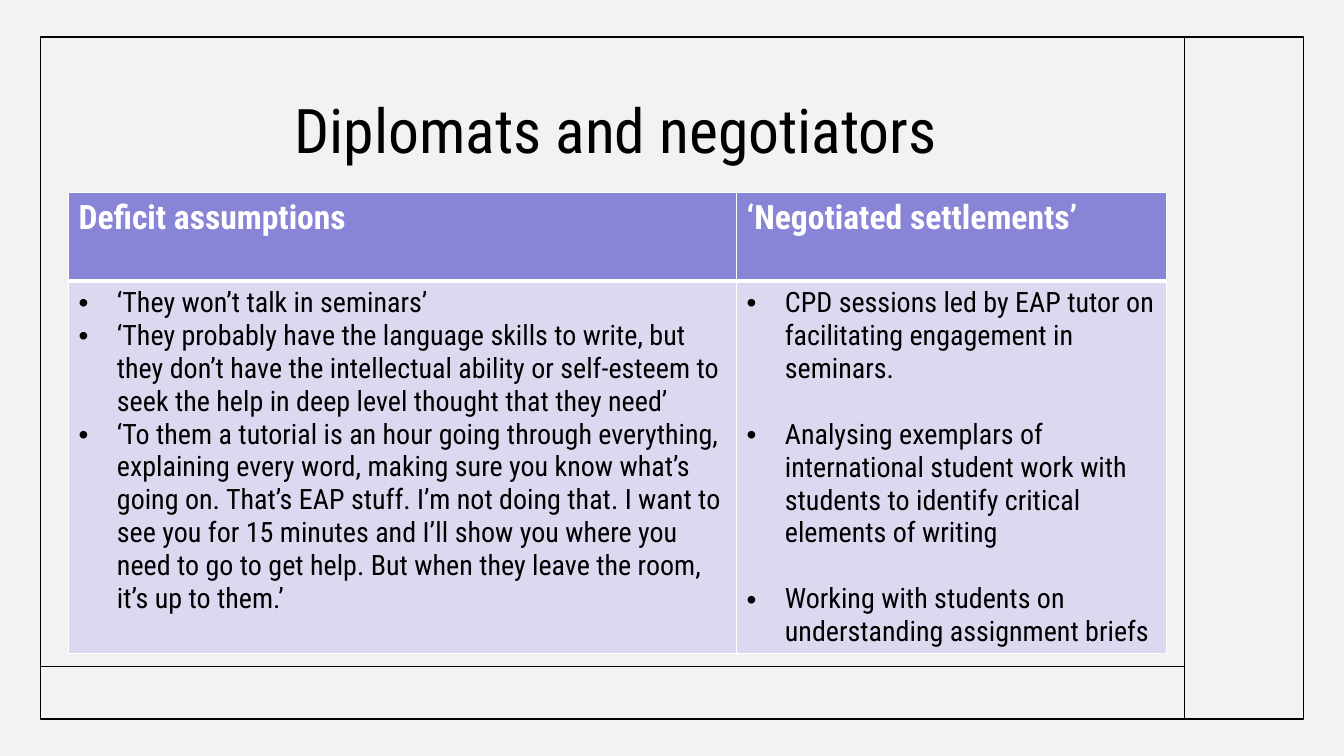
from lxml import etree
from pptx import Presentation, util as u
from pptx.dml.color import RGBColor
from pptx.enum import shapes, text
from pptx.oxml.ns import qn

INK, PAPER, WHITE = "000000", "F2F2F2", "FFFFFF"
HEAD, BODY = "8885D7", "DAD9F0"
SIDE, EDGE = 3, 4.9          # frame margins, % of width and height
RAIL, FOOT = 88.15, 88.13    # inner rules, % of width and height

POINTS = [
    ["‘They won’t talk in seminars’",
     "‘They probably have the language skills to write, but they don’t have "
     "the intellectual ability or self-esteem to seek the help in deep level "
     "thought that they need’",
     "‘To them a tutorial is an hour going through everything, explaining "
     "every word, making sure you know what’s going on. That’s EAP stuff. "
     "I’m not doing that. I want to see you for 15 minutes and I’ll show you "
     "where you need to go to get help. But when they leave the room, it’s "
     "up to them.’"],
    ["CPD sessions led by EAP tutor on facilitating engagement in seminars.",
     "Analysing exemplars of international student work with students to "
     "identify critical elements of writing",
     "Working with students on understanding assignment briefs"],
]


def color(code):
    return RGBColor.from_string(code)


class Deck:
    """Style and current slide; all lengths are percentages of its size."""
    font = "Roboto Condensed"

    def __init__(self):
        self.prs = Presentation()
        self.prs.slide_width = u.Inches(13.33)
        self.prs.slide_height = u.Inches(7.5)
        self.slide = self.prs.slides.add_slide(self.prs.slide_layouts[5])
        fill = self.slide.background.fill
        fill.solid()
        fill.fore_color.rgb = color(PAPER)

    def x(self, share):
        return round(self.prs.slide_width * share / 100)

    def y(self, share):
        return round(self.prs.slide_height * share / 100)

    def box(self, left, top, width, height):
        return self.x(left), self.y(top), self.x(width), self.y(height)

    def put(self, frame, *lines, size=20, ink=INK, bold=False, align=None,
            lead=None, gap=0, bullet=False):
        """Fill a text frame with one paragraph per line; gap is in points."""
        frame.word_wrap = True
        for i, line in enumerate(lines):
            para = frame.add_paragraph() if i else frame.paragraphs[0]
            para.alignment, para.line_spacing = align, lead
            if i and gap:
                para.space_before = u.Pt(gap)
            if bullet:
                props = para._p.get_or_add_pPr()
                props.set("marL", str(u.Inches(0.38)))
                props.set("indent", str(-u.Inches(0.38)))
                etree.SubElement(props, qn("a:buFont")).set("typeface", "Arial")
                etree.SubElement(props, qn("a:buChar")).set("char", "•")
            run = para.add_run()
            run.text = line
            run.font.name, run.font.size = self.font, u.Pt(size)
            run.font.bold, run.font.color.rgb = bold, color(ink)

    def title(self, words, *place):
        head = self.slide.shapes.title
        head.left, head.top, head.width, head.height = self.box(*place)
        head.text_frame.auto_size = text.MSO_AUTO_SIZE.NONE
        head.text_frame.vertical_anchor = text.MSO_ANCHOR.MIDDLE
        self.put(head.text_frame, words, size=44, lead=0.9,
                 align=text.PP_ALIGN.CENTER)

    def frame(self, *place):
        rect = self.slide.shapes.add_shape(shapes.MSO_SHAPE.RECTANGLE,
                                           *self.box(*place))
        rect.shadow.inherit = False
        rect.fill.background()
        self.stroke(rect)

    def rule(self, x1, y1, x2, y2):
        line = self.slide.shapes.add_connector(
            shapes.MSO_CONNECTOR.STRAIGHT,
            self.x(x1), self.y(y1), self.x(x2), self.y(y2))
        self.stroke(line)
        etree.SubElement(line._element.spPr, qn("a:effectLst"))

    def stroke(self, shape):
        shape.line.color.rgb = color(INK)
        shape.line.width = u.Pt(1)

    def table(self, left, top, cols, rows):
        grid = self.slide.shapes.add_table(
            len(rows), len(cols),
            *self.box(left, top, sum(cols), sum(rows))).table
        for col, share in zip(grid.columns, cols):
            col.width = self.x(share)
        for row, share in zip(grid.rows, rows):
            row.height = self.y(share)
        return grid

    def cell(self, cell, fill, *lines, top=1, base=1, **style):
        """Fill a cell; top and base are border widths in points."""
        props = cell._tc.get_or_add_tcPr()
        for side, width in zip("LRTB", (1, 1, top, base)):
            edge = etree.SubElement(props, qn("a:ln" + side), w=str(u.Pt(width)))
            solid = etree.SubElement(edge, qn("a:solidFill"))
            etree.SubElement(solid, qn("a:srgbClr"), val=WHITE)
        cell.fill.solid()
        cell.fill.fore_color.rgb = color(fill)
        self.put(cell.text_frame, *lines, **style)


def main():
    deck = Deck()
    deck.frame(SIDE, EDGE, 100 - 2 * SIDE, 100 - 2 * EDGE)
    deck.rule(RAIL, EDGE, RAIL, 100 - EDGE)
    deck.rule(SIDE, FOOT, RAIL, FOOT)
    deck.title("Diplomats and negotiators", 6.9, 8, 77.9, 19.3)

    grid = deck.table(5.1, 25.5, cols=(49.7, 32), rows=(11.7, 49.3))
    heads = "Deficit assumptions", "‘Negotiated settlements’"
    for i, (head, points, gap) in enumerate(zip(heads, POINTS, (0, 23.6))):
        deck.cell(grid.cell(0, i), HEAD, head, base=3,
                  size=24, ink=WHITE, bold=True)
        deck.cell(grid.cell(1, i), BODY, *points, top=3, gap=gap, bullet=True)
    deck.prs.save("out.pptx")


if __name__ == "__main__":
    main()
